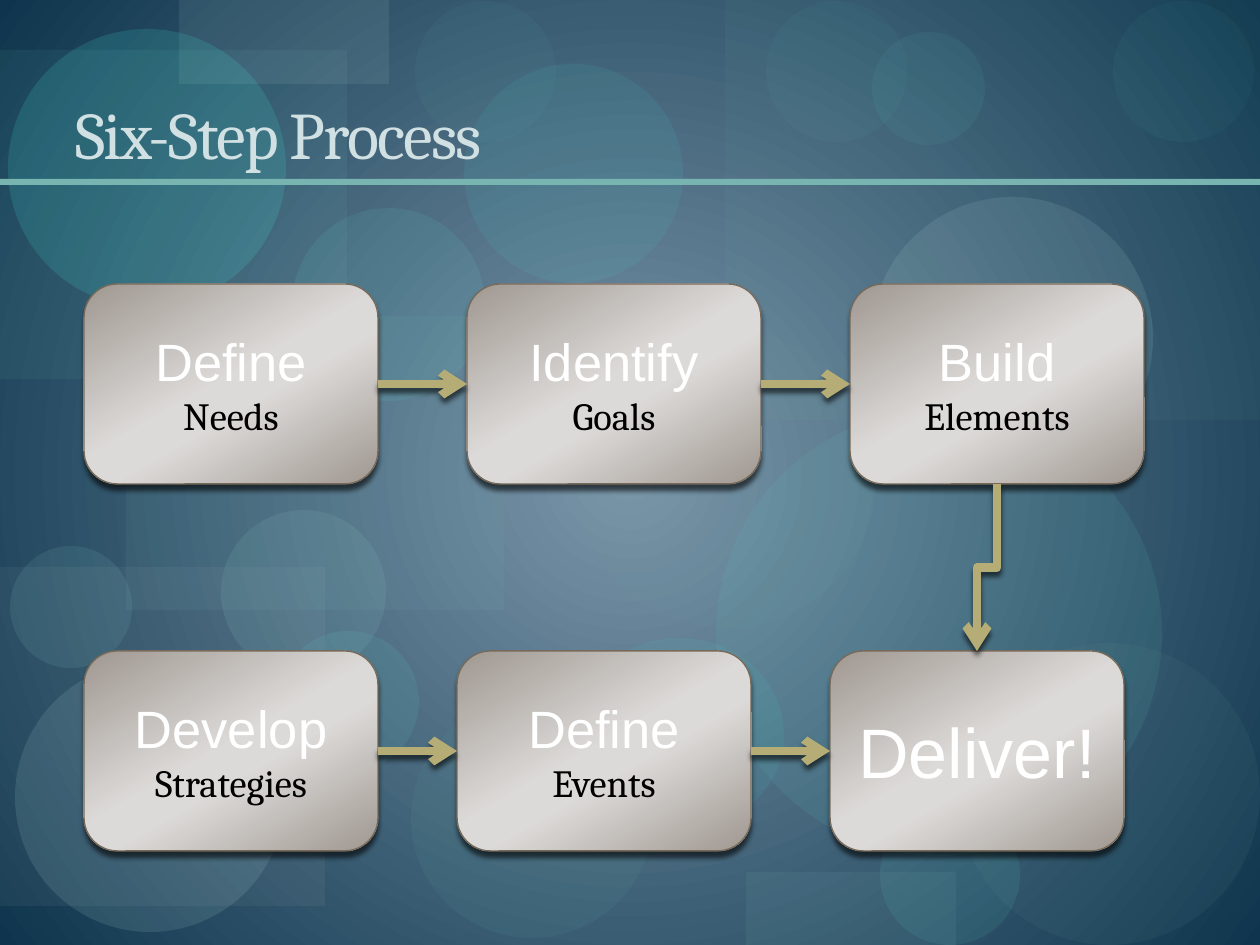
from dataclasses import dataclass
from itertools import pairwise

from lxml.etree import SubElement
from pptx import Presentation
from pptx.dml.color import RGBColor
from pptx.enum.shapes import MSO_CONNECTOR as Link, MSO_SHAPE as Preset
from pptx.enum.text import MSO_ANCHOR as Anchor, PP_ALIGN as Align
from pptx.oxml.ns import qn
from pptx.util import Emu, Pt

PX_PER_INCH = 126
WIDTH, HEIGHT = 1260, 945
BOX_WIDTH, BOX_HEIGHT = 294, 200
TOP, LEFT, BOTTOM, RIGHT = range(4)

COLORS = {
    "center": "7B96AA", "edge": "0E354D", "title": "D1E1E3",
    "teal": "79B5B0", "deep": "549791", "gray": "B2B7BA", "sage": "70A39E",
    "aqua": "65E8DC", "ice": "C1E8E4", "bright": "44EADC", "mint": "77D6CE",
    "mist": "BED7D4", "foam": "97DCD6", "sea": "61CDC4",
    "stone": "A09891", "pearl": "DCDAD8", "outline": "776A5B",
    "arrow": "B6AD76", "white": "FFFFFF", "black": "000000",
}


@dataclass(frozen=True)
class Decoration:
    preset: Preset
    left: int
    top: int
    width: int
    height: int
    color: str
    opacity: int = 100


@dataclass(frozen=True)
class Row:
    top: int
    pitch: int
    steps: tuple[tuple[str, str], ...]


def disc(left: int, top: int, size: int, color: str, opacity: int) -> Decoration:
    return Decoration(Preset.OVAL, left, top, size, size, color, opacity)


DECORATIONS = [
    Decoration(Preset.RECTANGLE, 126, 316, 378, 294, "teal", 9),
    Decoration(Preset.OVAL, 411, 699, 242, 239, "deep", 13),
    Decoration(Preset.RECTANGLE, 725, 0, 535, 420, "teal", 6),
    Decoration(Preset.RECTANGLE, 0, 567, 325, 339, "gray", 8),
    disc(576, 329, 300, "sage", 8),
    disc(880, 805, 140, "aqua", 9),
    disc(871, 197, 282, "ice", 11),
    disc(15, 662, 270, "ice", 12),
    disc(278, 631, 141, "aqua", 9),
    Decoration(Preset.OVAL, 575, 638, 209, 193, "bright", 8),
    Decoration(Preset.RECTANGLE, 0, 50, 347, 329, "mint", 7),
    Decoration(Preset.RECTANGLE, 179, 0, 210, 84, "mist", 10),
    disc(8, 29, 278, "bright", 15),
    disc(10, 546, 122, "foam", 10),
    disc(292, 208, 193, "aqua", 9),
    disc(464, 64, 219, "bright", 8),
    disc(716, 410, 446, "sea", 10),
    disc(766, 1, 141, "aqua", 4),
    disc(958, 643, 302, "sage", 8),
    disc(221, 510, 165, "foam", 10),
    disc(872, 32, 113, "aqua", 6),
    disc(1113, 1, 141, "aqua", 4),
    Decoration(Preset.RECTANGLE, 746, 872, 210, 73, "teal", 10),
    disc(415, 1, 141, "aqua", 4),
    Decoration(Preset.RECTANGLE, 0, 179, WIDTH, 6, "teal"),
]

ROWS = [
    Row(284, 383, (("Define", "Needs"), ("Identify", "Goals"), ("Build", "Elements"))),
    Row(651, 373, (("Develop", "Strategies"), ("Define", "Events"), ("Deliver!", ""))),
]


def px(length: float) -> Emu:
    return Emu(round(length * 914400 / PX_PER_INCH))


def rgb(name: str) -> RGBColor:
    return RGBColor.from_string(COLORS[name])


def add_color(parent, name: str, opacity: int = 100) -> None:
    color = SubElement(parent, qn("a:srgbClr"), val=COLORS[name])
    if opacity < 100:
        SubElement(color, qn("a:alpha"), val=str(opacity * 1000))


def set_gradient(fill, parent, stops, angle: int | None = None) -> None:
    """Linear at the given angle, or circular from the middle without one."""
    fill.gradient()
    gradient = parent.find(qn("a:gradFill"))
    for child in list(gradient):
        gradient.remove(child)
    stop_list = SubElement(gradient, qn("a:gsLst"))
    for position, name in stops:
        add_color(SubElement(stop_list, qn("a:gs"), pos=str(position * 1000)), name)
    if angle is None:
        circle = SubElement(gradient, qn("a:path"), {"path": "circle"})
        SubElement(circle, qn("a:fillToRect"), dict.fromkeys("ltrb", "50000"))
    else:
        SubElement(gradient, qn("a:lin"), ang=str(angle * 60000), scaled="0")


def add_shadow(properties) -> None:
    effects = SubElement(properties, qn("a:effectLst"))
    shadow = SubElement(effects, qn("a:outerShdw"), blurRad=str(Pt(3)),
                        dist=str(Pt(3)), dir="5400000", rotWithShape="0")
    add_color(shadow, "black", 60)


def write(paragraph, text: str, *, font: str, size: int, color: str,
          align: Align = Align.LEFT, spacing: int = 0) -> None:
    paragraph.alignment = align
    run = paragraph.add_run()
    run.text = text
    run.font.name, run.font.size = font, Pt(size)
    run.font.color.rgb = rgb(color)
    if spacing:
        run.font._element.set("spc", str(spacing * 100))


def add_decoration(slide, item: Decoration) -> None:
    shape = slide.shapes.add_shape(
        item.preset, px(item.left), px(item.top), px(item.width), px(item.height))
    shape.shadow.inherit = False
    shape.line.fill.background()
    shape.fill.solid()
    shape.fill.fore_color.rgb = rgb(item.color)
    if item.opacity < 100:
        color = shape._element.spPr.find(f"{qn('a:solidFill')}/{qn('a:srgbClr')}")
        SubElement(color, qn("a:alpha"), val=str(item.opacity * 1000))


def add_step(slide, left: int, top: int, heading: str, detail: str):
    box = slide.shapes.add_shape(
        Preset.ROUNDED_RECTANGLE, px(left), px(top), px(BOX_WIDTH), px(BOX_HEIGHT))
    stops = [(0, "stone"), (48, "pearl"), (58, "pearl"), (100, "stone")]
    set_gradient(box.fill, box._element.spPr, stops, angle=60)
    box.line.color.rgb = rgb("outline")
    box.line.width = Pt(0.79)
    add_shadow(box._element.spPr)
    frame = box.text_frame
    frame.word_wrap = True
    frame.vertical_anchor = Anchor.MIDDLE
    write(frame.paragraphs[0], heading, font="Arial", size=30 if detail else 40,
          color="white", align=Align.CENTER)
    if detail:
        write(frame.add_paragraph(), detail, font="Cambria", size=22,
              color="black", align=Align.CENTER)
    return box


def add_arrow(slide, kind: Link, start, start_side: int, end, end_side: int):
    arrow = slide.shapes.add_connector(kind, 0, 0, 0, 0)
    arrow.begin_connect(start, start_side)
    arrow.end_connect(end, end_side)
    arrow.line.color.rgb = rgb("arrow")
    arrow.line.width = Pt(4.72)
    SubElement(arrow.line._get_or_add_ln(), qn("a:tailEnd"), type="arrow")
    add_shadow(arrow._element.spPr)
    return arrow


def turn_downward(arrow) -> None:
    """Swap the frame's sides about its centre and rotate it by 90 degrees."""
    width, height = arrow.width, arrow.height
    shift = (width - height) // 2
    arrow.left, arrow.top = arrow.left + shift, arrow.top - shift
    arrow.width, arrow.height = height, width
    frame = arrow._element.spPr.find(qn("a:xfrm"))
    frame.attrib.pop("flipH", None)
    frame.set("rot", "5400000")


def main() -> None:
    presentation = Presentation()
    presentation.slide_width, presentation.slide_height = px(WIDTH), px(HEIGHT)
    slide = presentation.slides.add_slide(presentation.slide_layouts[6])

    # Background
    background = slide.background.fill
    background.solid()
    set_gradient(background, slide._element.find(f".//{qn('p:bgPr')}"),
                 [(0, "center"), (100, "edge")])
    for item in DECORATIONS:
        add_decoration(slide, item)

    # Title
    title = slide.shapes.add_textbox(px(63), px(21), px(1134), px(158)).text_frame
    title.word_wrap = True
    title.vertical_anchor = Anchor.BOTTOM
    write(title.paragraphs[0], "Six-Step Process", font="Cambria", size=38,
          color="title", spacing=-1)

    # Steps
    rows = [[add_step(slide, 84 + column * row.pitch, row.top, *step)
             for column, step in enumerate(row.steps)] for row in ROWS]

    # Arrows along the rows, then down the right side
    for boxes in rows:
        for start, end in pairwise(boxes):
            add_arrow(slide, Link.STRAIGHT, start, RIGHT, end, LEFT)
    upper, lower = rows
    turn_downward(add_arrow(slide, Link.ELBOW, upper[-1], BOTTOM, lower[-1], TOP))

    presentation.save("out.pptx")


if __name__ == "__main__":
    main()
